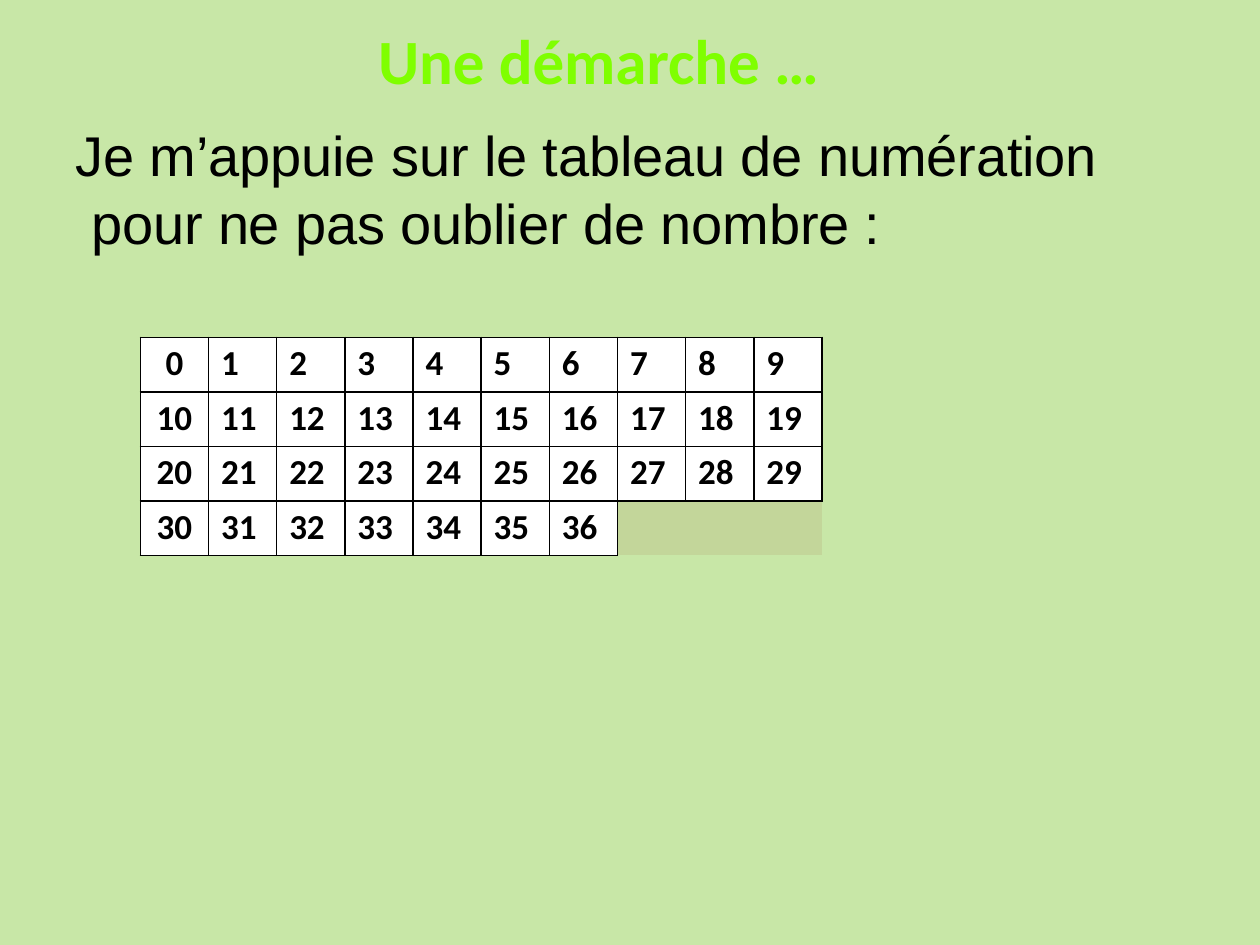
"""Build a slide with a number table from 0 to 36."""
from typing import NamedTuple

from lxml.etree import SubElement as Sub
from pptx import Presentation
from pptx.dml.color import RGBColor
from pptx.enum.text import MSO_ANCHOR as Anchor, PP_ALIGN as Align
from pptx.oxml.ns import qn
from pptx.table import Table
from pptx.util import Pt

GREEN = RGBColor(0xC8, 0xE7, 0xA7)
LIME = RGBColor(0x7F, 0xFF, 0x00)
OLIVE = RGBColor(0xC3, 0xD6, 0x9A)
BLACK = RGBColor(0, 0, 0)
WHITE = RGBColor(0xFF, 0xFF, 0xFF)
PLAIN = "{2D5ABB26-0587-4C30-8999-92F81FD0307C}"
ROWS, COLS, LAST = 4, 10, 36
WIDE, HIGH = 38.95, 31.14


class Item(NamedTuple):
    num: int
    row: int
    col: int


def write(frame, text: str, *, font: str, size: float, color=BLACK, bold=False,
          align=Align.LEFT, left=0.0, first=0.0, before=1.0, track=0) -> None:
    """Put one formatted paragraph into a text frame."""
    para = frame.paragraphs[0]
    para.alignment = align
    para.space_before = Pt(before)
    props = para._p.get_or_add_pPr()
    props.set("marL", str(Pt(left)))
    props.set("indent", str(Pt(first)))
    run = para.add_run()
    run.text = text
    run.font.name, run.font.size = font, Pt(size)
    run.font.bold = bold
    run.font.color.rgb = color
    if track:
        run._r.get_or_add_rPr().set("spc", str(track))


def inset(part, top: float) -> None:
    """Set the margins and the top anchor of a frame or cell."""
    part.margin_left = part.margin_right = part.margin_bottom = 0
    part.margin_top = Pt(top)
    part.vertical_anchor = Anchor.TOP


def paint(cell, color: RGBColor, sides: str) -> None:
    """Fill a cell and draw black borders on the given sides."""
    cell.fill.solid()
    cell.fill.fore_color.rgb = color
    props = cell._tc.get_or_add_tcPr()
    for spot, side in enumerate(sides):
        line = Sub(props, qn(f"a:ln{side}"), w=str(Pt(1)))
        Sub(Sub(line, qn("a:solidFill")), qn("a:srgbClr"), val=str(BLACK))
        props.insert(spot, line)


def draw(table: Table, item: Item) -> None:
    """Draw one number in its cell."""
    cell = table.cell(item.row, item.col)
    inset(cell, 2.9)
    head = item.col == 0
    write(cell.text_frame, str(item.num), font="Calibri", size=20, bold=True,
          align=Align.CENTER if head else Align.LEFT,
          left=0 if head else 7.2, before=2.6)
    paint(cell, WHITE, "LRTB")


def main() -> None:
    """Compose and save the slide."""
    deck = Presentation()
    deck.slide_width, deck.slide_height = Pt(720), Pt(540)
    slide = deck.slides.add_slide(deck.slide_layouts[5])
    back = slide.background.fill
    back.solid()
    back.fore_color.rgb = GREEN

    title = slide.shapes.title
    title.left, title.top = Pt(215.3), Pt(11.5)
    title.width, title.height = Pt(254.9), Pt(45.4)
    inset(title.text_frame, 0.7)
    write(title.text_frame, "Une démarche …", font="Calibri", size=36,
          color=LIME, bold=True, left=0.7)

    body = slide.shapes.add_textbox(Pt(42.5), Pt(68.4), Pt(589), Pt(78.5))
    body.text_frame.word_wrap = True
    inset(body.text_frame, 0.7)
    write(body.text_frame,
          "Je m’appuie sur le tableau de numération pour ne pas oublier de nombre :",
          font="Arial", size=32, left=9.6, first=-8.9, track=-10)

    frame = slide.shapes.add_table(ROWS, COLS, Pt(80.2), Pt(192.8),
                                   Pt(COLS * WIDE), Pt(ROWS * HIGH))
    table = frame.table
    table.first_row = table.horz_banding = False
    table._tbl.tblPr.find(qn("a:tableStyleId")).text = PLAIN
    for col in table.columns:
        col.width = Pt(WIDE)
    for row in table.rows:
        row.height = Pt(HIGH)
    for num in range(LAST + 1):
        draw(table, Item(num, *divmod(num, COLS)))
    row, col = divmod(LAST + 1, COLS)
    rest = table.cell(row, col)
    rest.merge(table.cell(ROWS - 1, COLS - 1))
    paint(rest, OLIVE, "LT")

    deck.save("out.pptx")


if __name__ == "__main__":
    main()
